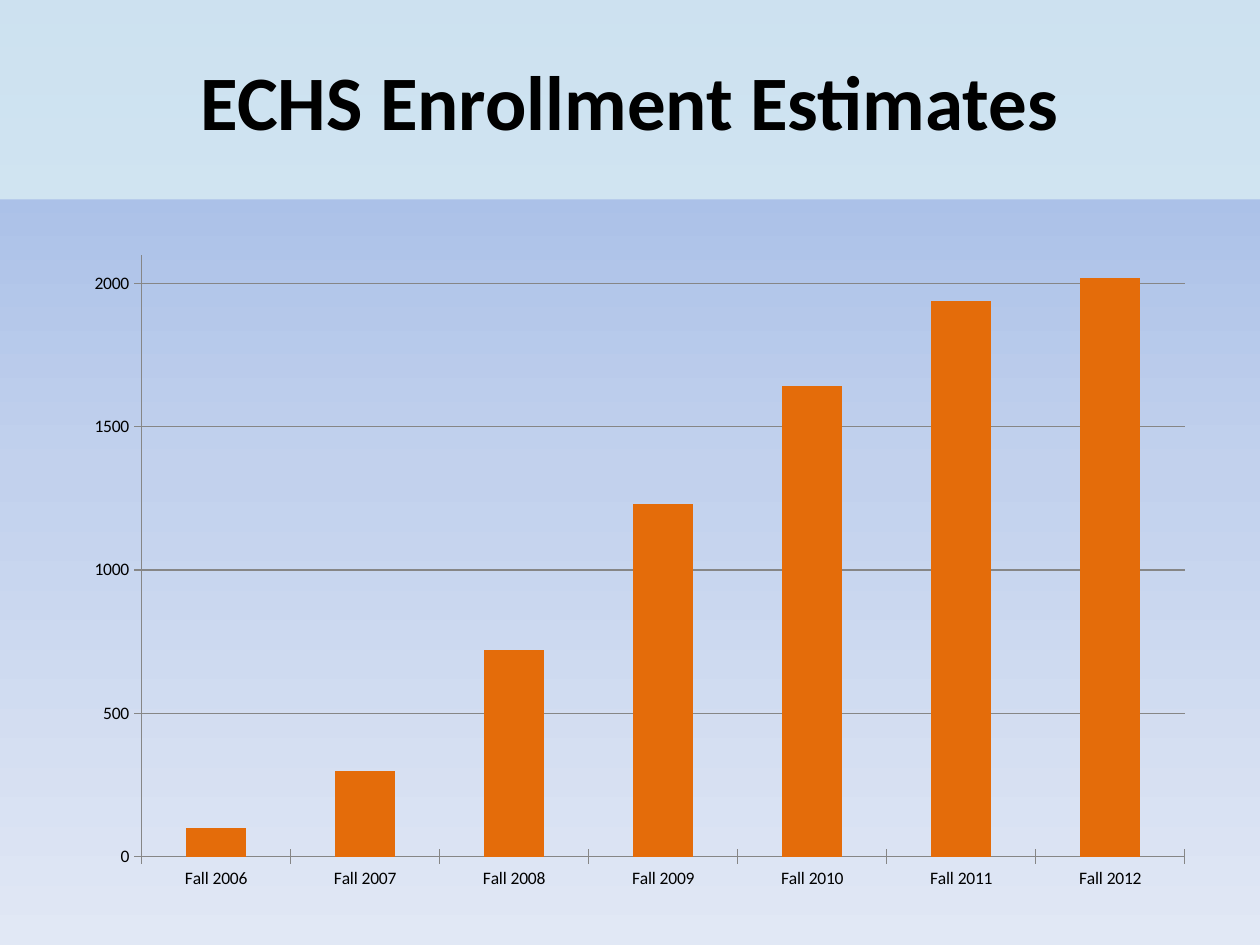
from copy import deepcopy

from lxml.etree import SubElement
from pptx import Presentation
from pptx.chart.data import CategoryChartData
from pptx.dml.color import RGBColor
from pptx.enum.chart import XL_CHART_TYPE as ChartType, XL_TICK_MARK as Tick
from pptx.enum.shapes import MSO_SHAPE as Shape
from pptx.enum.text import MSO_ANCHOR as Anchor, PP_ALIGN as Align
from pptx.oxml import parse_xml
from pptx.oxml.ns import nsdecls, qn
from pptx.util import Pt

BLACK = RGBColor(0x00, 0x00, 0x00)
GRAY = RGBColor(0x86, 0x86, 0x86)
ORANGE = RGBColor(0xE4, 0x6C, 0x0A)
BAND = RGBColor(0xDB, 0xEE, 0xF4)
SKY = [(0, RGBColor(0x9A, 0xB5, 0xE4)),
       (0.5, RGBColor(0xC2, 0xD1, 0xED)),
       (1, RGBColor(0xE1, 0xE8, 0xF5))]

ENROLLMENT = {2006: 100, 2007: 300, 2008: 720, 2009: 1230,
              2010: 1640, 2011: 1940, 2012: 2020}


class Deck:
    font = "Calibri"

    def __init__(self, prs):
        self.s = prs.slides.add_slide(prs.slide_layouts[6])

    def background(self, stops):
        fill = self.s.background.fill
        fill.gradient()
        fill.gradient_angle = 270
        gs_list = next(self.s.element.iter(qn("a:gsLst")))
        while len(gs_list) < len(stops):
            gs_list.append(deepcopy(gs_list[0]))
        for stop, (position, color) in zip(fill.gradient_stops, stops):
            stop.position = position
            stop.color.rgb = color

    def title_band(self, text, x, y, w, h, color, opacity):
        sp = self.s.shapes.add_shape(Shape.RECTANGLE, Pt(x), Pt(y), Pt(w), Pt(h))
        sp.shadow.inherit = False
        sp.line.fill.background()
        sp.fill.solid()
        sp.fill.fore_color.rgb = color
        clr = next(sp.element.spPr.iter(qn("a:srgbClr")))
        SubElement(clr, qn("a:alpha")).set("val", str(opacity * 1000))
        tf = sp.text_frame
        tf.word_wrap = True
        tf.vertical_anchor = Anchor.MIDDLE
        p = tf.paragraphs[0]
        p.text = text
        p.alignment = Align.CENTER
        p.font.name, p.font.size, p.font.bold = self.font, Pt(44), True
        p.font.color.rgb = BLACK

    def column_chart(self, values, x, y, w, h, color, top, step):
        data = CategoryChartData()
        data.categories = [f"Fall {year}" for year in values]
        data.add_series("Series 1", values.values())
        chart = self.s.shapes.add_chart(ChartType.COLUMN_CLUSTERED, Pt(x), Pt(y),
                                        Pt(w), Pt(h), data).chart
        chart.has_legend = chart.has_title = False
        chart.font.name, chart.font.size = self.font, Pt(10)
        chart.font.color.rgb = BLACK

        # Columns
        plot = chart.plots[0]
        plot.vary_by_categories = False
        plot.gap_width = 150
        fmt = plot.series[0].format
        fmt.fill.solid()
        fmt.fill.fore_color.rgb = color

        # Axes and grid
        val_axis = chart.value_axis
        val_axis.minimum_scale, val_axis.maximum_scale = 0, top
        val_axis.major_unit = step
        val_axis.has_major_gridlines = True
        for axis in (chart.category_axis, val_axis):
            axis.major_tick_mark = Tick.CROSS
            axis.minor_tick_mark = Tick.NONE
        for part in (chart.category_axis, val_axis, val_axis.major_gridlines):
            part.format.line.color.rgb = GRAY
            part.format.line.width = Pt(0.75)

        # Fixed plot area, as fractions of the chart
        area = next(chart.element.iter(qn("c:plotArea")))
        for old in area.findall(qn("c:layout")):
            area.remove(old)
        box = "".join(f'<c:{k} val="{v}"/>' for k, v in
                      dict(x=0.06, y=0.02, w=0.92, h=0.91).items())
        area.insert(0, parse_xml(
            f'<c:layout {nsdecls("c")}><c:manualLayout>'
            '<c:layoutTarget val="inner"/><c:xMode val="edge"/>'
            f'<c:yMode val="edge"/>{box}</c:manualLayout></c:layout>'))


def main():
    prs = Presentation()
    prs.slide_width, prs.slide_height = Pt(720), Pt(540)
    deck = Deck(prs)
    deck.background(SKY)
    deck.title_band("ECHS Enrollment Estimates", 0, 0, 720, 114, BAND, 79)
    deck.column_chart(ENROLLMENT, 42, 138, 648, 378, ORANGE, top=2100, step=500)
    prs.save("out.pptx")


if __name__ == "__main__":
    main()
